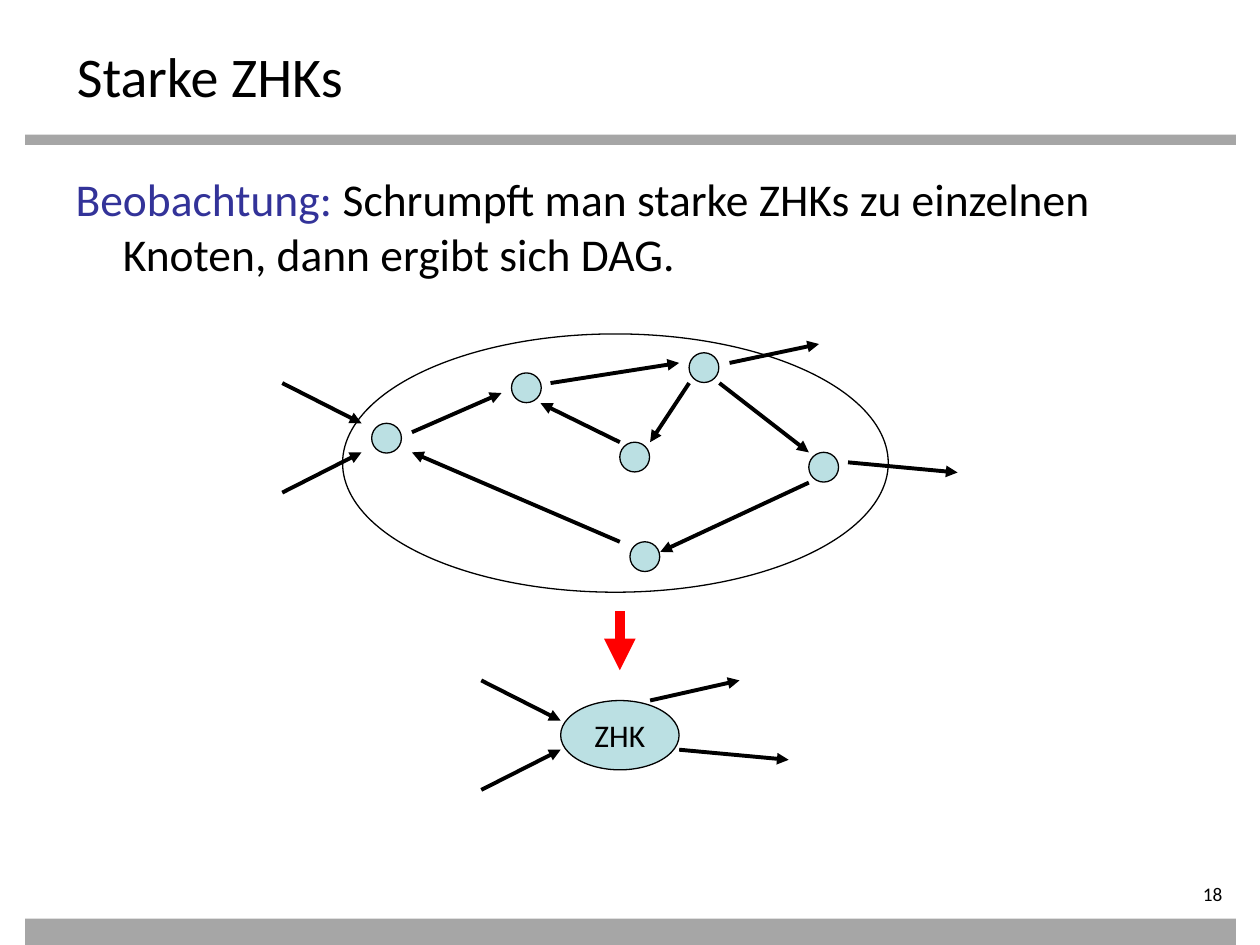
from lxml import etree
from pptx import Presentation
from pptx import util as u
from pptx.dml.color import RGBColor
from pptx.enum import shapes, text
from pptx.oxml.ns import qn

Pt = u.Pt
FONT = "Calibri"
COLORS = {"black": "000000", "bar": "A6A6A6", "node": "BBE0E3",
          "keyword": "333399", "step": "FF0000"}
NODE_SIZE = 17

# Left and top of each node inside the component
NODES = [(360, 309.6), (212.4, 241.9), (292.3, 213.1),
         (393.8, 201.6), (462.2, 258.5), (354.2, 252.7)]

# Start x, y and end x, y of each edge
INNER_EDGES = [
    (354.2, 309.6, 235.4, 258.5), (462.2, 275.8, 377.3, 315.4),
    (235.4, 247, 286.6, 224.6), (314.6, 218.9, 388.1, 207.4),
    (411.1, 218.9, 462.2, 258.5), (354.2, 252.7, 308.9, 230.4),
    (393.8, 218.9, 371.5, 252.7),
]
OUTER_EDGES = [
    (161.3, 218.9, 206.6, 241.9), (161.3, 281.5, 206.6, 258.5),
    (416.9, 207.4, 468, 196.6), (484.6, 264.2, 547.2, 270),
]
SHRUNK_EDGES = [
    (275, 388.8, 320.4, 411.8), (275, 451.4, 320.4, 428.4),
    (371.5, 400.3, 422.6, 388.8), (388.1, 428.4, 450.7, 434.2),
]


def rgb(name):
    return RGBColor.from_string(COLORS[name])


def set_all(target, values):
    for name, value in values.items():
        setattr(target, name, value)


def add_span(para, words, size, color="black"):
    span = para.add_run()
    span.text = words
    set_all(span.font, {"name": FONT, "size": Pt(size)})
    span.font.color.rgb = rgb(color)


def place(item, left, top, width, height):
    set_all(item, {"left": Pt(left), "top": Pt(top),
                   "width": Pt(width), "height": Pt(height)})


def add_figure(page, kind, bounds, fill=None, outline=None):
    figure = page.shapes.add_shape(kind, *map(Pt, bounds))
    figure.shadow.inherit = False
    if fill:
        figure.fill.solid()
        figure.fill.fore_color.rgb = rgb(fill)
    else:
        figure.fill.background()
    if outline:
        figure.line.color.rgb = rgb(outline)
        figure.line.width = Pt(0.75)
    else:
        figure.line.fill.background()
    return figure


def add_ellipse(page, bounds, fill=None):
    return add_figure(page, shapes.MSO_SHAPE.OVAL, bounds, fill, "black")


def add_arrow(page, ends, color="black", width=2.25):
    arrow = page.shapes.add_connector(
        shapes.MSO_CONNECTOR.STRAIGHT, *map(Pt, ends))
    arrow.line.color.rgb = rgb(color)
    arrow.line.width = Pt(width)
    etree.SubElement(arrow.line._get_or_add_ln(), qn("a:tailEnd"), type="triangle")
    etree.SubElement(arrow._element.spPr, qn("a:effectLst"))


def fill_title(page):
    title = page.shapes.title
    place(title, 36.7, 20.2, 648, 39.6)
    set_all(title.text_frame, {"vertical_anchor": text.MSO_ANCHOR.TOP,
                               "auto_size": text.MSO_AUTO_SIZE.NONE,
                               "word_wrap": True})
    para = title.text_frame.paragraphs[0]
    para.alignment = text.PP_ALIGN.LEFT
    add_span(para, "Starke ZHKs", 32)


def fill_body(page):
    body = page.placeholders[1]
    place(body, 36, 94.3, 648, 391)
    set_all(body.text_frame, {"auto_size": text.MSO_AUTO_SIZE.NONE,
                              "word_wrap": True})
    para = body.text_frame.paragraphs[0]
    # Hanging indent without a bullet
    props = para._p.get_or_add_pPr()
    props.set("marL", str(Pt(27)))
    props.set("indent", str(-Pt(27)))
    etree.SubElement(props, qn("a:buNone"))
    para.space_before = Pt(0)
    add_span(para, "Beobachtung:", 26, "keyword")
    add_span(para, " Schrumpft man starke ZHKs zu einzelnen Knoten, "
                   "dann ergibt sich DAG.", 26)


def add_page_number(page):
    box = page.shapes.add_textbox(*map(Pt, (626.4, 504, 79.2, 15.8)))
    set_all(box.text_frame, {"margin_left": 0, "margin_top": 0,
                             "margin_right": Pt(7.2), "margin_bottom": 0,
                             "word_wrap": True})
    para = box.text_frame.paragraphs[0]
    para.alignment = text.PP_ALIGN.RIGHT
    add_span(para, "18", 11)


def main():
    deck = Presentation()
    set_all(deck, {"slide_width": Pt(720), "slide_height": Pt(540)})
    page = deck.slides.add_slide(deck.slide_layouts[1])

    # Frame and text
    for top, height in ((77, 5.8), (524.9, 15.1)):
        add_figure(page, shapes.MSO_SHAPE.RECTANGLE,
                   (14.4, top, 691.9, height), "bar")
    add_page_number(page)
    fill_title(page)
    fill_body(page)

    # Strongly connected component
    add_ellipse(page, (195.8, 190.8, 311.8, 147.6))
    for left, top in NODES:
        add_ellipse(page, (left, top, NODE_SIZE, NODE_SIZE), "node")
    for ends in INNER_EDGES + OUTER_EDGES:
        add_arrow(page, ends)

    # Shrinking step
    add_arrow(page, (354.2, 349.2, 354.2, 383), "step", 6)

    # Component as a single node
    component = add_ellipse(page, (320.4, 400.3, 67.7, 39.6), "node")
    set_all(component.text_frame, {"vertical_anchor": text.MSO_ANCHOR.MIDDLE,
                                   "word_wrap": False})
    para = component.text_frame.paragraphs[0]
    para.alignment = text.PP_ALIGN.CENTER
    add_span(para, "ZHK", 18)
    for ends in SHRUNK_EDGES:
        add_arrow(page, ends)

    deck.save("out.pptx")


if __name__ == "__main__":
    main()
